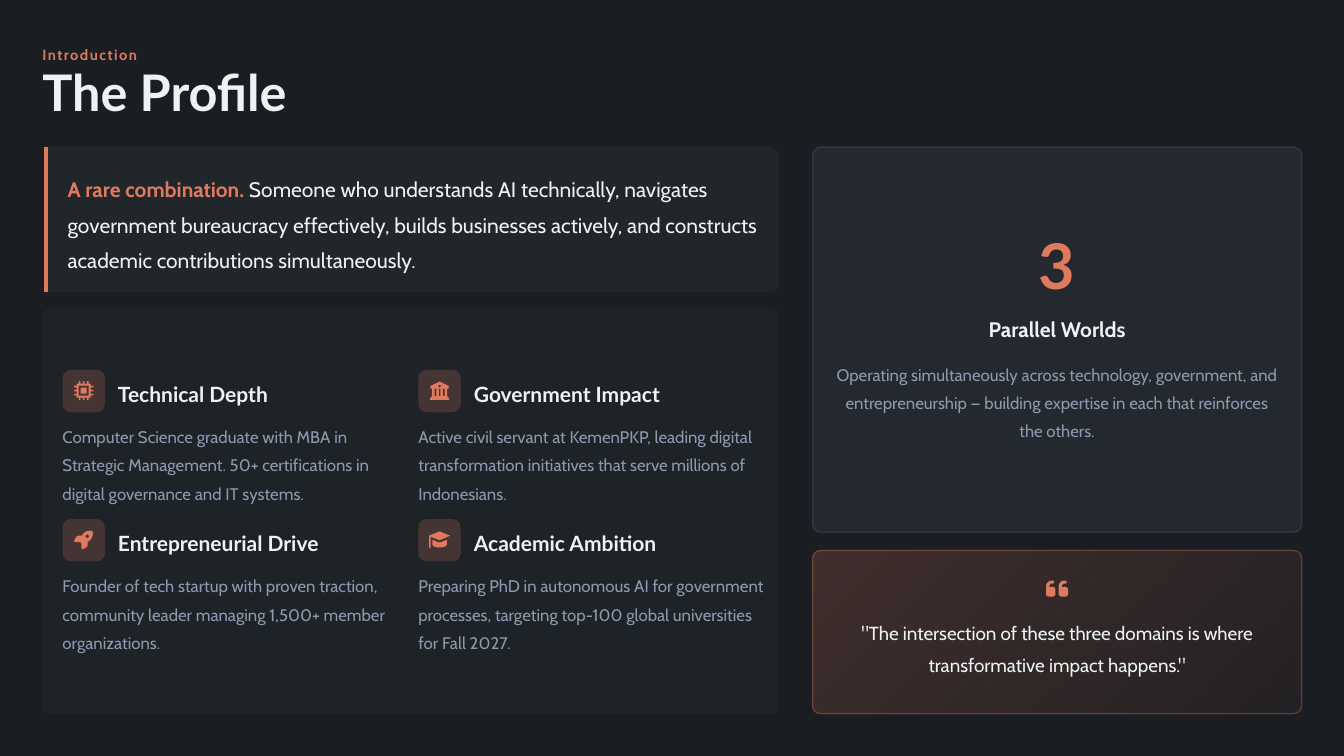
from math import cos, pi, sin

from lxml.etree import SubElement
from pptx import Presentation
from pptx.dml.color import RGBColor
from pptx.enum.shapes import MSO_SHAPE
from pptx.enum.text import MSO_ANCHOR, PP_ALIGN
from pptx.oxml.ns import qn
from pptx.util import Inches, Pt

COLORS = {"background": "1A1D21", "accent": "E07A5F", "light": "EDF2F4",
          "muted": "8D99AE", "slate": "4A5C6A"}
RADIUS = 0.08
UNITS_PER_INCH = 1000  # outlines are given in thousandths of an inch


def color(name):
    return RGBColor.from_string(COLORS[name])


def set_opacities(shape, *percentages):
    """Apply opacities to the fill and line colours in their order."""
    colors = list(shape.element.spPr.iter(qn("a:srgbClr")))
    for element, percentage in zip(colors, percentages):
        SubElement(element, qn("a:alpha")).set("val", str(percentage * 1000))


def add_text(slide, box, text, size, color_name, font="Cabin", bold=False,
             spacing=1.2, align=PP_ALIGN.LEFT, tracking=None, lead=None):
    """Add one paragraph, optionally opened by a bold accent lead."""
    frame = slide.shapes.add_textbox(*map(Inches, box)).text_frame
    frame.word_wrap = True
    frame.vertical_anchor = MSO_ANCHOR.MIDDLE
    frame.margin_left = frame.margin_right = 0
    frame.margin_top = frame.margin_bottom = 0
    paragraph = frame.paragraphs[0]
    paragraph.alignment = align
    paragraph.line_spacing = spacing
    paragraph.font.name = font
    paragraph.font.size = Pt(size)
    paragraph.font.bold = bold
    paragraph.font.color.rgb = color(color_name)
    if tracking:
        paragraph._p.pPr.find(qn("a:defRPr")).set("spc", str(tracking))
    if lead:
        run = paragraph.add_run()
        run.text = lead
        run.font.bold = True
        run.font.color.rgb = color("accent")
    paragraph.add_run().text = text


def add_panel(slide, box, fill, opacity, line_opacity=None, end_opacity=None):
    """Add a rounded panel; an end opacity makes its fill a gradient."""
    shape = slide.shapes.add_shape(MSO_SHAPE.ROUNDED_RECTANGLE, *map(Inches, box))
    shape.adjustments[0] = RADIUS / min(box[2:])
    shape.shadow.inherit = False
    opacities = [opacity]
    if end_opacity is None:
        shape.fill.solid()
        shape.fill.fore_color.rgb = color(fill)
    else:
        shape.fill.gradient()
        shape.fill.gradient_angle = 315
        for stop in shape.fill.gradient_stops:
            stop.color.rgb = color(fill)
        opacities.append(end_opacity)
    if line_opacity is None:
        shape.line.fill.background()
    else:
        shape.line.color.rgb = color(fill)
        shape.line.width = Pt(1)
        opacities.append(line_opacity)
    set_opacities(shape, *opacities)


def outline(start, *steps):
    """Turn line steps (x, y) and cubic steps (six numbers) into points."""
    points = [start]
    for step in steps:
        if len(step) == 2:
            points.append(step)
            continue
        controls = [points[-1], step[:2], step[2:4], step[4:]]
        for i in range(1, 9):
            t = i / 8
            weights = ((1 - t) ** 3, 3 * t * (1 - t) ** 2, 3 * t * t * (1 - t), t ** 3)
            points.append(tuple(sum(w * c[axis] for w, c in zip(weights, controls))
                                for axis in (0, 1)))
    return points


def rectangle(left, top, right, bottom):
    return [(left, top), (right, top), (right, bottom), (left, bottom)]


def circle(x, y, radius):
    return [(x + radius * cos(i * pi / 12), y + radius * sin(i * pi / 12))
            for i in range(24)]


def add_outlines(slide, left, top, outlines, fill="accent"):
    """Draw closed outlines as one shape; inner outlines become holes."""
    builder = slide.shapes.build_freeform(*outlines[0][0], scale=Inches(1) / UNITS_PER_INCH)
    for index, points in enumerate(outlines):
        if index:
            builder.move_to(*points[0])
        builder.add_line_segments(points[1:], close=True)
    shape = builder.convert_to_shape(Inches(left), Inches(top))
    shape.shadow.inherit = False
    shape.fill.solid()
    shape.fill.fore_color.rgb = color(fill)
    shape.line.fill.background()
    return shape


def chip_icon():
    pins = []
    for center in (55, 95, 135):
        for near, far in ((0, 25), (165, 190)):
            pins.append(rectangle(center - 8, near, center + 8, far))
            pins.append(rectangle(near, center - 8, far, center + 8))
    return [rectangle(25, 25, 165, 165), rectangle(45, 45, 145, 145),
            rectangle(65, 65, 125, 125), *pins]


def institution_icon():
    roof = [(95, 5), (185, 50), (185, 75), (5, 75), (5, 50)]
    base = [(20, 150), (170, 150), (190, 172), (190, 188), (0, 188), (0, 172)]
    columns = [rectangle(x, 75, x + 24, 150) for x in range(22, 150, 41)]
    return [roof, circle(95, 50, 13), *columns, base]


def rocket_icon():
    body = outline((48, 118), (12, 118), (3, 118, -2, 108, 3, 100), (22, 67),
                   (27, 59, 35, 55, 44, 55), (75, 55), (105, 5, 150, 2, 176, 7),
                   (180, 8, 183, 11, 184, 15), (190, 42, 187, 86, 136, 116),
                   (136, 146), (136, 156, 131, 164, 123, 168), (92, 187),
                   (84, 191, 74, 186, 74, 177), (74, 138), (74, 124, 66, 118, 48, 118))
    return [body, circle(130, 60, 17)]


def graduation_icon():
    board = outline((0, 55), (105, 13), (210, 55), (105, 100), (15, 64),
                    (15, 168), (15, 178, 0, 178, 0, 168))
    cap = outline((33, 95), (85, 117), (98, 122, 112, 122, 125, 117), (177, 95),
                  (177, 140), (177, 160, 145, 172, 105, 172), (65, 172, 33, 160, 33, 140))
    return [board, cap]


def quote_icon():
    mark = outline((0, 110), (0, 76, 25, 50, 58, 50), (66, 50), (84, 50, 84, 80, 66, 80),
                   (58, 80), (44, 80, 32, 92, 32, 112), (63, 112),
                   (80, 112, 94, 126, 94, 143), (94, 180), (94, 197, 80, 210, 63, 210),
                   (32, 210), (14, 210, 0, 197, 0, 180))
    return [mark, [(x + 125, y) for x, y in mark]]


def add_header(slide, left, top, width):
    add_text(slide, (left, top, width, 0.21), "Introduction", 10.5, "accent",
             bold=True, tracking=110)
    add_text(slide, (left, top + 0.29, width, 0.5), "The Profile", 36, "light",
             font="Lato", bold=True, spacing=0.8)


def add_callout(slide, left, top, width, height):
    right, bottom, radius = (round(n * UNITS_PER_INCH) for n in (width, height, RADIUS))
    panel = outline((0, 0), (right - radius, 0), (right - 40, 0, right, 40, right, radius),
                    (right, bottom - radius),
                    (right, bottom - 40, right - 40, bottom, right - radius, bottom),
                    (0, bottom))
    set_opacities(add_outlines(slide, left, top, [panel], "slate"), 15)
    add_outlines(slide, left, top, [rectangle(0, 0, 40, bottom)])
    add_text(slide, (left + 0.23, top + 0.21, width - 0.33, height - 0.42),
             " Someone who understands AI technically, navigates government bureaucracy "
             "effectively, builds businesses actively, and constructs academic "
             "contributions simultaneously.",
             15, "light", spacing=1.4, lead="A rare combination.")


def add_strength(slide, left, top, icon, icon_width, title, description):
    add_panel(slide, (left, top, 0.42, 0.42), "accent", 20)
    add_outlines(slide, left + (0.42 - icon_width) / 2, top + 0.11, icon)
    add_text(slide, (left + 0.55, top + 0.07, 2.12, 0.29), title, 15, "light",
             font="Lato", bold=True)
    add_text(slide, (left, top + 0.5, 3.44, 0.81), description, 12, "muted", spacing=1.4)


def add_strengths(slide, left, top, width, height):
    add_panel(slide, (left, top, width, height), "slate", 10)
    strengths = [
        (chip_icon(), 0.19, "Technical Depth",
         "Computer Science graduate with MBA in Strategic Management. "
         "50+ certifications in digital governance and IT systems."),
        (institution_icon(), 0.19, "Government Impact",
         "Active civil servant at KemenPKP, leading digital transformation "
         "initiatives that serve millions of Indonesians."),
        (rocket_icon(), 0.19, "Entrepreneurial Drive",
         "Founder of tech startup with proven traction, community leader "
         "managing 1,500+ member organizations."),
        (graduation_icon(), 0.21, "Academic Ambition",
         "Preparing PhD in autonomous AI for government processes, "
         "targeting top-100 global universities for Fall 2027."),
    ]
    for index, strength in enumerate(strengths):
        row, column = divmod(index, 2)
        add_strength(slide, left + 0.2 + column * 3.53, top + 0.61 + row * 1.48, *strength)


def add_worlds_card(slide, left, top, width, height):
    add_panel(slide, (left, top, width, height), "slate", 20, line_opacity=40)
    add_text(slide, (left + 0.1, top + 0.92, width - 0.2, 0.62), "3", 45, "accent",
             font="Lato", bold=True, spacing=0.8, align=PP_ALIGN.CENTER)
    add_text(slide, (left + 0.2, top + 1.63, width - 0.4, 0.29), "Parallel Worlds", 15,
             "light", bold=True, align=PP_ALIGN.CENTER)
    add_text(slide, (left + 0.21, top + 2.09, width - 0.42, 0.81),
             "Operating simultaneously across technology, government, and "
             "entrepreneurship — building expertise in each that reinforces the others.",
             12, "muted", spacing=1.4, align=PP_ALIGN.CENTER)


def add_quote_card(slide, left, top, width, height):
    add_panel(slide, (left, top, width, height), "accent", 20, line_opacity=30, end_opacity=5)
    add_outlines(slide, left + width / 2 - 0.11, top + 0.25, quote_icon())
    add_text(slide, (left + 0.2, top + 0.63, width - 0.4, 0.61),
             '"The intersection of these three domains is where '
             'transformative impact happens."',
             13.5, "light", spacing=1.4, align=PP_ALIGN.CENTER)


def main():
    presentation = Presentation()
    presentation.slide_width = Inches(13.33)
    presentation.slide_height = Inches(7.5)
    slide = presentation.slides.add_slide(presentation.slide_layouts[6])
    slide.background.fill.solid()
    slide.background.fill.fore_color.rgb = color("background")
    add_header(slide, 0.42, 0.42, 12.57)
    add_callout(slide, 0.44, 1.46, 7.28, 1.44)
    add_strengths(slide, 0.42, 3.06, 7.3, 4.03)
    add_worlds_card(slide, 8.06, 1.46, 4.85, 3.82)
    add_quote_card(slide, 8.06, 5.46, 4.85, 1.62)
    presentation.save("out.pptx")


if __name__ == "__main__":
    main()
